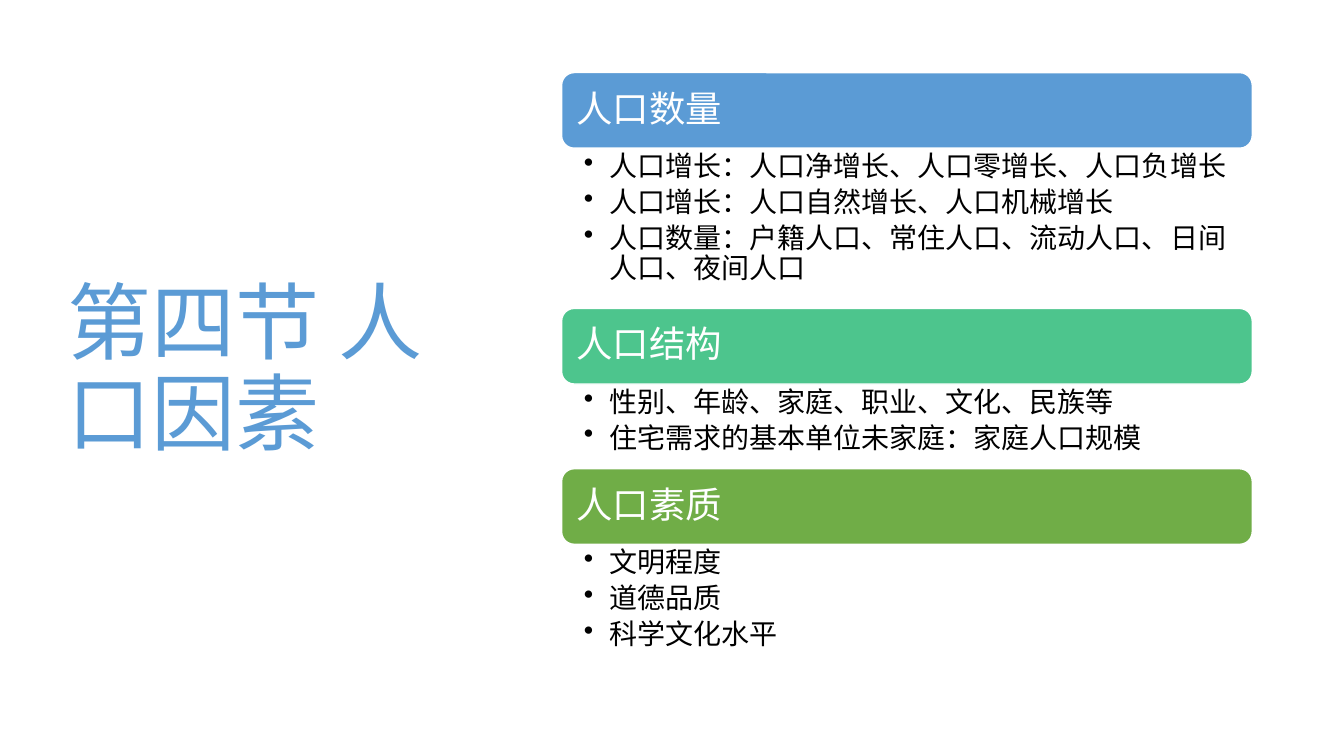
import collections
import pptx
import pptx.util
import pptx.dml.color
import pptx.enum.shapes
import pptx.enum.text
import pptx.oxml
import pptx.oxml.ns
from dataclasses import dataclass

Inches, Pt = pptx.util.Inches, pptx.util.Pt
Box = collections.namedtuple("Box", "left top width height")
Section = collections.namedtuple("Section", "heading fill body_height items")


@dataclass(frozen=True)
class Theme:
    font: str = "Noto Sans CJK SC"
    blue: str = "5B9BD5"
    teal: str = "4DC58D"
    green: str = "70AD47"
    white: str = "FFFFFF"
    black: str = "000000"
    title_size: int = 60
    heading_size: int = 26
    item_size: int = 20
    line_spacing: float = 0.9


THEME = Theme()
PAGE_WIDTH, PAGE_HEIGHT = 13.33, 7.5
TITLE_BOX = Box(0.57, 0.68, 4.16, 6.02)
LIST_BOX = Box(5.57, 0.72, 6.85, 5.95)
HEADING_HEIGHT = 0.75
TITLE = "第四节 人口因素"
SECTIONS = [
    Section("人口数量", THEME.blue, 1.59, [
        "人口增长：人口净增长、人口零增长、人口负增长",
        "人口增长：人口自然增长、人口机械增长",
        "人口数量：户籍人口、常住人口、流动人口、日间人口、夜间人口"]),
    Section("人口结构", THEME.teal, 0.84, [
        "性别、年龄、家庭、职业、文化、民族等",
        "住宅需求的基本单位未家庭：家庭人口规模"]),
    Section("人口素质", THEME.green, 1.27, ["文明程度", "道德品质", "科学文化水平"]),
]


def rgb(value):
    return pptx.dml.color.RGBColor.from_string(value)


def inches(box):
    return [Inches(length) for length in box]


def set_frame(frame, anchor, left, top, right, bottom):
    frame.word_wrap = True
    frame.vertical_anchor = anchor
    frame.margin_left, frame.margin_top = Inches(left), Inches(top)
    frame.margin_right, frame.margin_bottom = Inches(right), Inches(bottom)


def write_para(para, text, size, color):
    para.text = text
    para.alignment = pptx.enum.text.PP_ALIGN.LEFT
    para.line_spacing = THEME.line_spacing
    font = para.font
    font.size, font.name = Pt(size), THEME.font
    font.color.rgb = rgb(color)
    # East Asian typeface
    east_asian = pptx.oxml.parse_xml(
        f'<a:ea {pptx.oxml.ns.nsdecls("a")} typeface="{THEME.font}"/>')
    font._element.find(pptx.oxml.ns.qn("a:latin")).addnext(east_asian)


def add_bullet(para):
    properties = para._p.get_or_add_pPr()
    properties.set("marL", str(Inches(0.25)))
    properties.set("indent", str(-Inches(0.25)))
    bullet = pptx.oxml.parse_xml(
        f'<a:buChar {pptx.oxml.ns.nsdecls("a")} char="•"/>')
    properties.find(pptx.oxml.ns.qn("a:defRPr")).addprevious(bullet)


def add_title(page, box):
    frame = page.shapes.add_textbox(*inches(box)).text_frame
    set_frame(frame, pptx.enum.text.MSO_ANCHOR.MIDDLE, 0.1, 0.05, 0.1, 0.05)
    write_para(frame.paragraphs[0], TITLE, THEME.title_size, THEME.blue)


def add_heading(page, box, text, fill):
    bar = page.shapes.add_shape(
        pptx.enum.shapes.MSO_SHAPE.ROUNDED_RECTANGLE, *inches(box))
    bar.shadow.inherit = False
    bar.fill.solid()
    bar.fill.fore_color.rgb = rgb(fill)
    bar.line.color.rgb = rgb(THEME.white)
    bar.line.width = Pt(1)
    set_frame(bar.text_frame, pptx.enum.text.MSO_ANCHOR.MIDDLE, 0.11, 0.11, 0.11, 0.11)
    para = bar.text_frame.paragraphs[0]
    write_para(para, text, THEME.heading_size, THEME.white)
    para.space_after = Pt(0.35 * THEME.heading_size)


def add_items(page, box, items):
    frame = page.shapes.add_textbox(*inches(box)).text_frame
    set_frame(frame, pptx.enum.text.MSO_ANCHOR.TOP, 0.22, 0.04, 0.2, 0.04)
    for index, item in enumerate(items):
        para = frame.add_paragraph() if index else frame.paragraphs[0]
        write_para(para, item, THEME.item_size, THEME.black)
        para.space_after = Pt(0.2 * THEME.item_size)
        add_bullet(para)


def add_sections(page, box):
    # Each heading bar sits directly on its list, and sections stack downwards
    top = box.top
    for section in SECTIONS:
        heading_box = Box(box.left, top, box.width, HEADING_HEIGHT)
        add_heading(page, heading_box, section.heading, section.fill)
        top += HEADING_HEIGHT
        items_box = Box(box.left, top, box.width, section.body_height)
        add_items(page, items_box, section.items)
        top += section.body_height


def main():
    deck = pptx.Presentation()
    deck.slide_width, deck.slide_height = Inches(PAGE_WIDTH), Inches(PAGE_HEIGHT)
    page = deck.slides.add_slide(deck.slide_layouts[6])
    add_title(page, TITLE_BOX)
    add_sections(page, LIST_BOX)
    deck.save("out.pptx")


if __name__ == "__main__":
    main()
